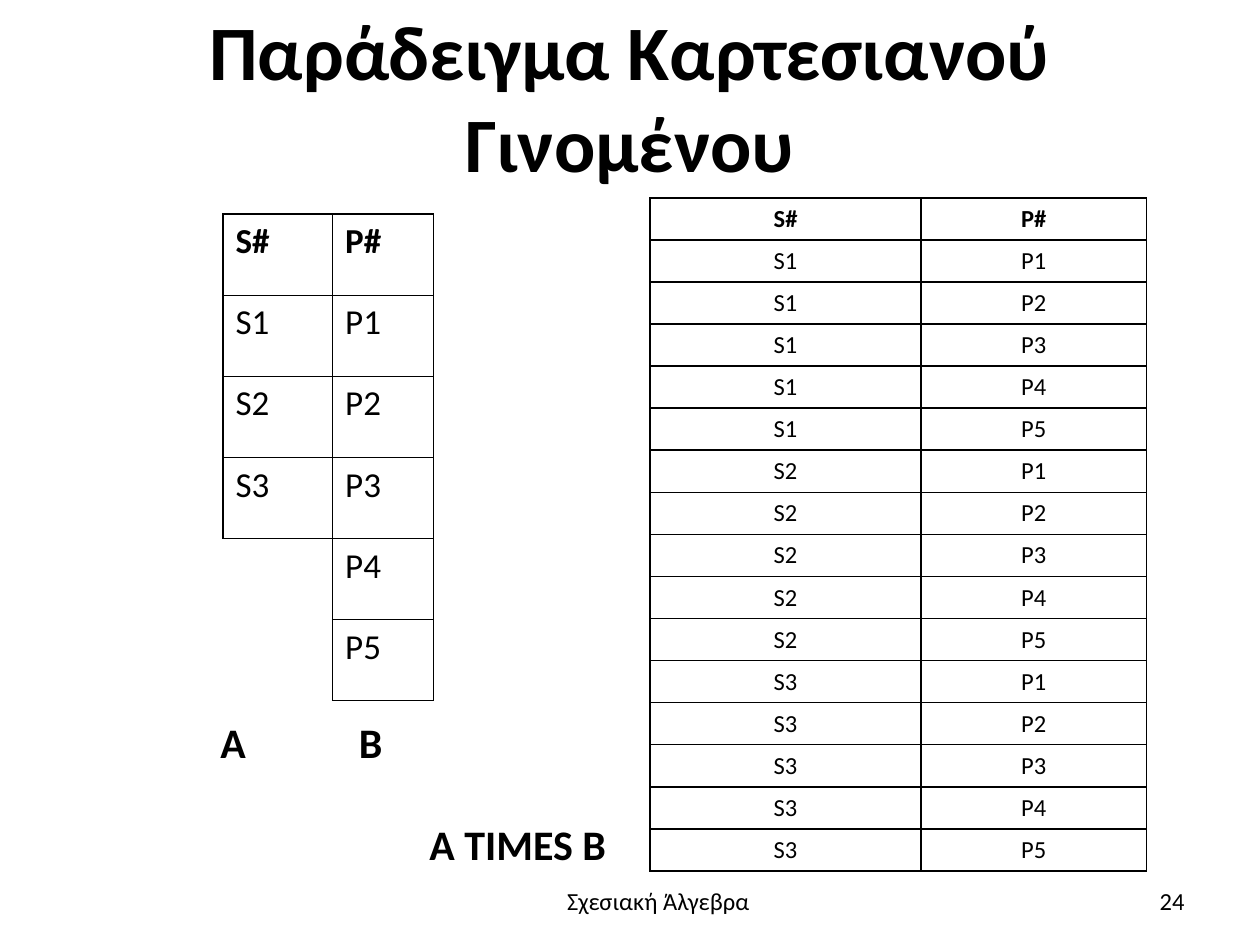
"""Build a slide showing two relations and their Cartesian product."""
from dataclasses import dataclass
from itertools import product, zip_longest

from lxml.etree import SubElement
from pptx import Presentation
from pptx.dml.color import RGBColor
from pptx.enum.text import MSO_ANCHOR, PP_ALIGN
from pptx.oxml.ns import qn
from pptx.util import Inches, Pt

COLORS = {"ink": "000000", "page": "FFFFFF"}
FONT = "Calibri"
GRID_COLUMNS, GRID_ROWS = 100, 75
SLIDE_WIDTH, SLIDE_HEIGHT = Inches(10), Inches(7.5)
HANGING = Inches(0.38)
SIDES = {"L": (0, -1), "R": (0, 1), "T": (-1, 0), "B": (1, 0)}


@dataclass(frozen=True)
class Area:
    column: float
    row: float
    columns: float
    rows: float

    def frame(self) -> tuple:
        return (across(self.column), down(self.row), across(self.columns), down(self.rows))


@dataclass(frozen=True)
class Relation:
    area: Area
    widths: tuple
    records: list
    size: int
    align: PP_ALIGN


@dataclass(frozen=True)
class Caption:
    text: str
    area: Area
    align: PP_ALIGN
    anchor: MSO_ANCHOR


def across(columns: float) -> int:
    return round(SLIDE_WIDTH * columns / GRID_COLUMNS)


def down(rows: float) -> int:
    return round(SLIDE_HEIGHT * rows / GRID_ROWS)


def style(paragraph, size: int, bold: bool = False, align: PP_ALIGN = PP_ALIGN.LEFT) -> None:
    paragraph.alignment = align
    font = paragraph.font
    font.name, font.size, font.bold = FONT, Pt(size), bold
    font.color.rgb = RGBColor.from_string(COLORS["ink"])


def indent(paragraph, left: int, first: int = 0) -> None:
    properties = paragraph._p.get_or_add_pPr()
    properties.set("marL", str(left))
    properties.set("indent", str(first))


def add_tab_stops(paragraph, stops: tuple) -> None:
    properties = paragraph._p.get_or_add_pPr()
    tabs = properties.makeelement(qn("a:tabLst"))
    for stop in stops:
        SubElement(tabs, qn("a:tab"), pos=str(across(stop)), algn="l")
    default_run = properties.find(qn("a:defRPr"))
    default_run.addprevious(tabs)


def draw_border(cell, position: int, side: str, visible: bool) -> None:
    properties = cell._tc.get_or_add_tcPr()
    line = properties.makeelement(qn(f"a:ln{side}"), {"w": str(Pt(1))})
    properties.insert(position, line)
    if visible:
        fill = SubElement(line, qn("a:solidFill"))
        SubElement(fill, qn("a:srgbClr"), val=COLORS["ink"])
    else:
        SubElement(line, qn("a:noFill"))


def draw_relation(slide, relation: Relation) -> None:
    records = relation.records
    table = slide.shapes.add_table(
        len(records), len(relation.widths), *relation.area.frame()).table
    table.first_row = table.horz_banding = False
    for column, width in zip(table.columns, relation.widths):
        column.width = across(width)
    for row in table.rows:
        row.height = down(relation.area.rows / len(records))
    filled = {(r, c) for r, record in enumerate(records)
              for c, value in enumerate(record) if value}
    for r, record in enumerate(records):
        for c, value in enumerate(record):
            cell = table.cell(r, c)
            cell.text = value
            cell.fill.background()
            paragraph = cell.text_frame.paragraphs[0]
            style(paragraph, relation.size, r == 0, relation.align)
            indent(paragraph, HANGING, -HANGING)
            for position, (side, (dr, dc)) in enumerate(SIDES.items()):
                visible = bool({(r, c), (r + dr, c + dc)} & filled)
                draw_border(cell, position, side, visible)


def add_text(slide, area: Area, anchor: MSO_ANCHOR = MSO_ANCHOR.TOP):
    frame = slide.shapes.add_textbox(*area.frame()).text_frame
    frame.word_wrap = True
    frame.vertical_anchor = anchor
    return frame


def draw_title(slide, text: str, area: Area) -> None:
    title = slide.shapes.title
    title.left, title.top, title.width, title.height = area.frame()
    title.text_frame.text = text
    title.text_frame.vertical_anchor = MSO_ANCHOR.MIDDLE
    style(title.text_frame.paragraphs[0], 44, True, PP_ALIGN.CENTER)


def draw_relation_names(slide) -> None:
    frame = add_text(slide, Area(7.5, 56.4, 41.7, 13.1))
    operands = frame.paragraphs[0]
    operands.text = "\tΑ\tΒ"
    style(operands, 24, True)
    add_tab_stops(operands, (9, 20))
    result = frame.add_paragraph()
    result.text = "Α TIMES B"
    style(result, 24, True)
    indent(result, across(25.6))
    result.space_before = Pt(29)


def draw_caption(slide, caption: Caption) -> None:
    frame = add_text(slide, caption.area, caption.anchor)
    frame.text = caption.text
    style(frame.paragraphs[0], 14, align=caption.align)


def main() -> None:
    presentation = Presentation()
    presentation.slide_width, presentation.slide_height = SLIDE_WIDTH, SLIDE_HEIGHT
    slide = presentation.slides.add_slide(presentation.slide_layouts[5])
    slide.background.fill.solid()
    slide.background.fill.fore_color.rgb = RGBColor.from_string(COLORS["page"])

    header = ("S#", "P#")
    suppliers = [f"S{n}" for n in range(1, 4)]
    parts = [f"P{n}" for n in range(1, 6)]
    operands = Relation(Area(17.7, 17, 16.7, 38.6), (8.7, 8),
                        [header, *zip_longest(suppliers, parts, fillvalue="")],
                        20, PP_ALIGN.LEFT)
    times = Relation(Area(51.6, 15.7, 39.4, 53.3), (21.5, 17.9),
                     [header, *product(suppliers, parts)], 14, PP_ALIGN.CENTER)

    draw_title(slide, "Παράδειγμα Καρτεσιανού Γινομένου", Area(5, 0.5, 90, 14.2))
    draw_relation_names(slide)
    for relation in (operands, times):
        draw_relation(slide, relation)
    for caption in (
        Caption("Σχεσιακή Άλγεβρα", Area(34.8, 69.8, 34.9, 5.5),
                PP_ALIGN.CENTER, MSO_ANCHOR.TOP),
        Caption("24", Area(71.7, 69.5, 23.3, 4), PP_ALIGN.RIGHT, MSO_ANCHOR.MIDDLE),
    ):
        draw_caption(slide, caption)
    presentation.save("out.pptx")


if __name__ == "__main__":
    main()
